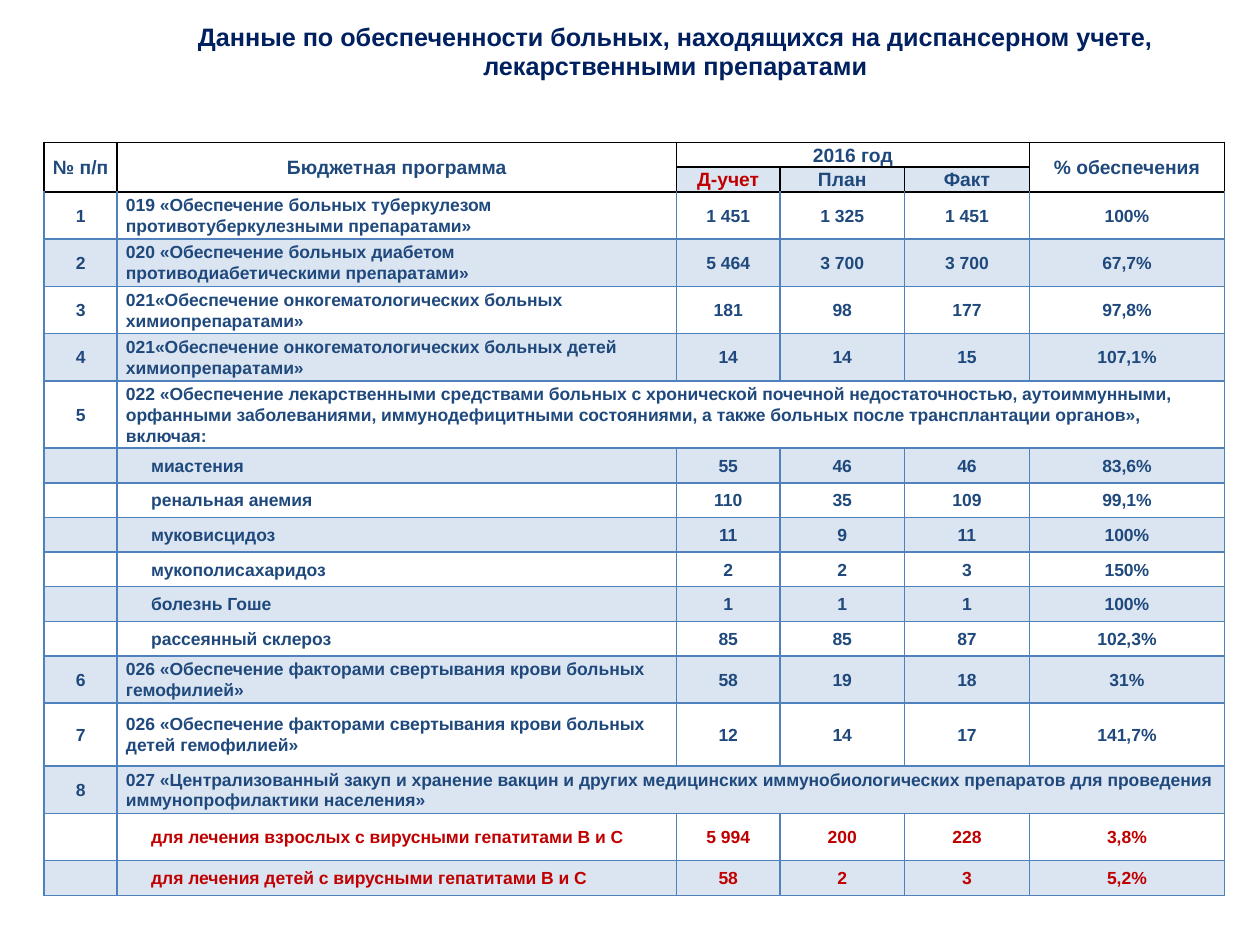
from lxml.etree import SubElement
from pptx import Presentation
from pptx.dml.color import RGBColor
from pptx.enum.text import MSO_ANCHOR as Anchor, PP_ALIGN as Align
from pptx.oxml.ns import qn
from pptx.util import Inches, Pt

NAVY = RGBColor(0x00, 0x20, 0x60)
INK = RGBColor(0x1F, 0x49, 0x7D)
RED = RGBColor(0xC0, 0x00, 0x00)
BLUE = RGBColor(0x4F, 0x81, 0xBD)
BLACK = RGBColor(0, 0, 0)
WHITE = RGBColor(0xFF, 0xFF, 0xFF)

TITLE = "Данные по обеспеченности больных, находящихся на диспансерном учете, лекарственными препаратами"
HEAD, SUB, MID, LONG, BIG = 0.19, 1.1 / 4, 3 / 8, 0.41, 0.5
COLS = [0.58, 4.44, 0.82, 0.99, 0.99, 1.55]
ROWS = [
    (HEAD, "№ п/п", "Бюджетная программа", "2016 год", "", "", "% обеспечения"),
    (HEAD, "", "", "Д-учет", "План", "Факт", ""),
    (MID, "1", "019 «Обеспечение больных туберкулезом противотуберкулезными препаратами»",
     "1 451", "1 325", "1 451", "100%"),
    (MID, "2", "020 «Обеспечение больных диабетом противодиабетическими препаратами»",
     "5 464", "3 700", "3 700", "67,7%"),
    (MID, "3", "021«Обеспечение онкогематологических больных химиопрепаратами»",
     "181", "98", "177", "97,8%"),
    (MID, "4", "021«Обеспечение онкогематологических больных детей химиопрепаратами»",
     "14", "14", "15", "107,1%"),
    (LONG, "5", "022 «Обеспечение лекарственными средствами больных с хронической почечной "
     "недостаточностью, аутоиммунными, орфанными заболеваниями, иммунодефицитными состояниями, "
     "а также больных после трансплантации органов», включая:", "", "", "", ""),
    (SUB, "", "миастения", "55", "46", "46", "83,6%"),
    (SUB, "", "ренальная анемия", "110", "35", "109", "99,1%"),
    (SUB, "", "муковисцидоз", "11", "9", "11", "100%"),
    (SUB, "", "мукополисахаридоз", "2", "2", "3", "150%"),
    (SUB, "", "болезнь Гоше", "1", "1", "1", "100%"),
    (SUB, "", "рассеянный склероз", "85", "85", "87", "102,3%"),
    (MID, "6", "026 «Обеспечение факторами свертывания крови больных гемофилией»",
     "58", "19", "18", "31%"),
    (BIG, "7", "026 «Обеспечение факторами свертывания крови больных детей гемофилией»",
     "12", "14", "17", "141,7%"),
    (MID, "8", "027 «Централизованный закуп и хранение вакцин и других медицинских "
     "иммунобиологических препаратов для проведения иммунопрофилактики населения»", "", "", "", ""),
    (MID, "", "для лечения взрослых с вирусными гепатитами В и С", "5 994", "200", "228", "3,8%"),
    (SUB, "", "для лечения детей с вирусными гепатитами В и С", "58", "2", "3", "5,2%"),
]
SPANS = [(0, 0, 1, 0), (0, 1, 1, 1), (0, 2, 0, 4), (0, 5, 1, 5), (6, 1, 6, 5), (15, 1, 15, 5)]


class Deck:
    face = "Arial"

    def __init__(self):
        self.file = Presentation()
        self.file.slide_width, self.file.slide_height = Inches(10), Inches(7.5)
        self.slide = self.file.slides.add_slide(self.file.slide_layouts[6])

    def style(self, para, size, color, align):
        para.alignment = align
        for run in para.runs:
            font = run.font
            font.name, font.size, font.bold = self.face, Pt(size), True
            font.color.rgb = color

    def title(self, text, left, top, width, height):
        box = self.slide.shapes.add_textbox(Inches(left), Inches(top), Inches(width), Inches(height))
        frame = box.text_frame
        frame.word_wrap = True
        frame.margin_top = frame.margin_bottom = 0
        frame.text = text
        para = frame.paragraphs[0]
        para.line_spacing = 0.97
        self.style(para, 14.4, NAVY, Align.CENTER)

    def edge(self, cell, side, color):
        line = SubElement(cell._tc.get_or_add_tcPr(), qn("a:ln" + side), w=str(Pt(1)))
        fill = SubElement(line, qn("a:solidFill"))
        SubElement(fill, qn("a:srgbClr"), val=str(color))

    def paint(self, cell, tint):
        cell.fill.solid()
        cell.fill.fore_color.rgb = BLUE if tint else WHITE
        if tint:
            color = cell._tc.tcPr.find(qn("a:solidFill")).find(qn("a:srgbClr"))
            SubElement(color, qn("a:alpha"), val="20000")

    def cell(self, cell, text, row, col):
        head = row < 2
        size = 11 if head else 10
        red = row > 15 or (row, col) == (1, 2)
        cell.margin_left = cell.margin_right = Inches(0.07 if col else 0.04)
        cell.margin_top = cell.margin_bottom = 0
        cell.vertical_anchor = Anchor.MIDDLE
        cell.text_frame.text = text
        para = cell.text_frame.paragraphs[0]
        para.line_spacing = 1.07
        if head:
            para.space_after = Pt(8)
        align = Align.LEFT if col == 1 and not head else Align.CENTER
        self.style(para, size, RED if red else INK, align)
        if not text:
            SubElement(para._p, qn("a:endParaRPr"), sz=str(size * 100))
        if col == 1 and not head and not ROWS[row][1]:
            para._p.get_or_add_pPr().set("marL", str(Inches(0.2)))
        for side in "LRTB":
            dark = head or (row == 2 and side == "T")
            self.edge(cell, side, BLACK if dark else BLUE)
        self.paint(cell, row % 2 and (not head or 2 <= col <= 4))

    def table(self, rows, cols, spans, left, top):
        high = sum(row[0] for row in rows)
        grid = self.slide.shapes.add_table(len(rows), len(cols), Inches(left), Inches(top),
                                           Inches(sum(cols)), Inches(high)).table
        grid.first_row = grid.horz_banding = False
        for col, width in zip(grid.columns, cols):
            col.width = Inches(width)
        for r, (height, *texts) in enumerate(rows):
            grid.rows[r].height = Inches(height)
            for c, text in enumerate(texts):
                self.cell(grid.cell(r, c), text, r, c)
        for r, c, last, end in spans:
            grid.cell(r, c).merge(grid.cell(last, end))


def main():
    deck = Deck()
    deck.title(TITLE, 1.22, 0.18, 8.28, 0.48)
    deck.table(ROWS, COLS, SPANS, 0.35, 1.13)
    deck.file.save("out.pptx")


if __name__ == "__main__":
    main()
